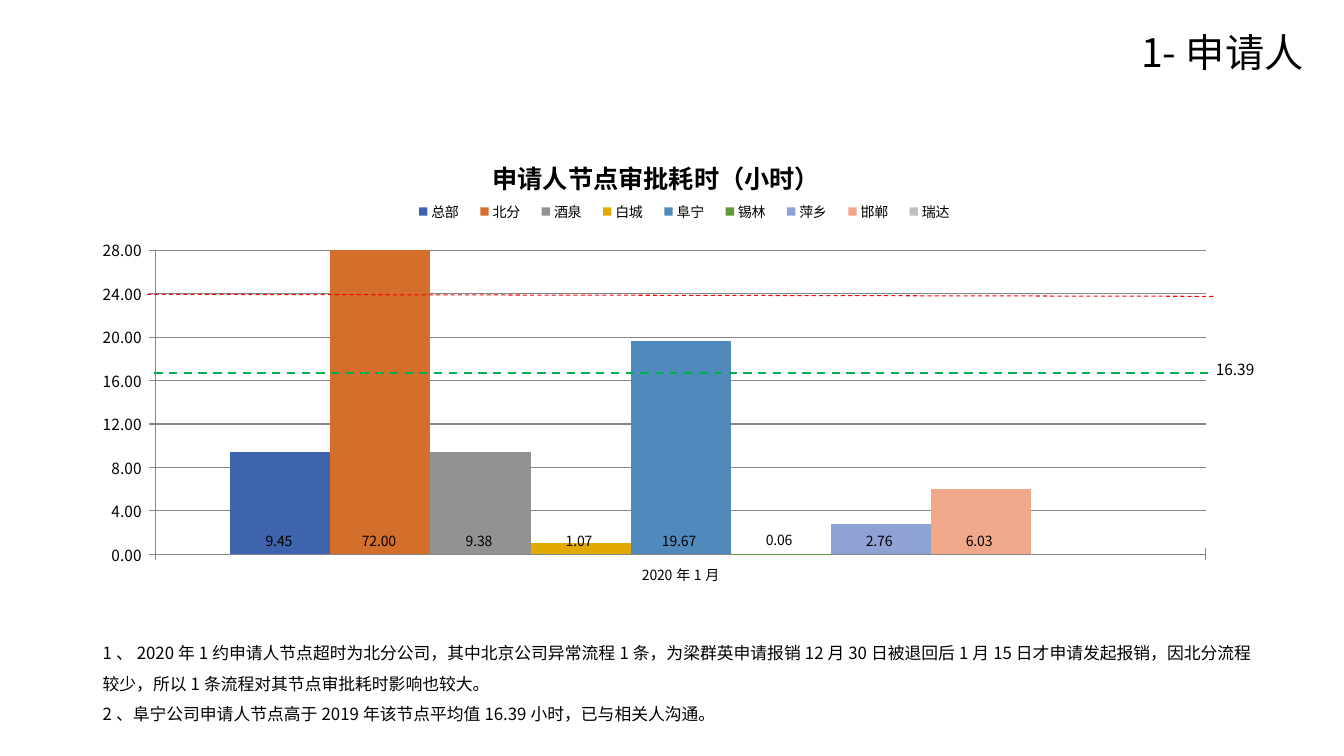
from dataclasses import dataclass
from typing import Optional

from lxml import etree
from pptx import Presentation
from pptx import util as u
from pptx.chart.data import CategoryChartData
from pptx.dml.color import RGBColor
from pptx.enum import chart as ch
from pptx.enum import dml, shapes, text
from pptx.oxml import parse_xml
from pptx.oxml.ns import nsdecls, qn

FONT = "Noto Sans CJK SC"
NUMBER_FORMAT = "0.00_ "
BLACK = RGBColor(0x00, 0x00, 0x00)
GRID = RGBColor(0x86, 0x86, 0x86)
RED = RGBColor(0xFF, 0x00, 0x00)
GREEN = RGBColor(0x00, 0xB0, 0x50)
BLUE = RGBColor(0x3D, 0x64, 0xAD)
ORANGE = RGBColor(0xD3, 0x6F, 0x2B)
GRAY = RGBColor(0x92, 0x92, 0x92)
GOLD = RGBColor(0xE2, 0xAA, 0x00)
SKY = RGBColor(0x50, 0x89, 0xBC)
LEAF = RGBColor(0x62, 0x99, 0x3E)
PALE_BLUE = RGBColor(0x8F, 0xA2, 0xD4)
PALE_ORANGE = RGBColor(0xF1, 0xA7, 0x8A)
PALE_GRAY = RGBColor(0xBF, 0xBF, 0xBF)

INSIDE = ch.XL_LABEL_POSITION.INSIDE_BASE
OUTSIDE = ch.XL_LABEL_POSITION.OUTSIDE_END


@dataclass
class Branch:
    name: str
    hours: float
    color: RGBColor
    label: Optional[ch.XL_LABEL_POSITION] = INSIDE


@dataclass
class Note:
    box: tuple[float, float, float, float]
    lines: list[str]
    size: float
    spacing: float = 1.0
    anchor: text.MSO_ANCHOR = text.MSO_ANCHOR.TOP


@dataclass
class Threshold:
    start: tuple[float, float]
    end: tuple[float, float]
    color: RGBColor
    width: float


BRANCHES = [
    Branch("总部", 9.45, BLUE),
    Branch("北分", 72, ORANGE),
    Branch("酒泉", 9.38, GRAY),
    Branch("白城", 1.07, GOLD),
    Branch("阜宁", 19.67, SKY),
    Branch("锡林", 0.06, LEAF, OUTSIDE),
    Branch("萍乡", 2.76, PALE_BLUE),
    Branch("邯郸", 6.03, PALE_ORANGE),
    Branch("瑞达", 0, PALE_GRAY, None),
]
THRESHOLDS = [
    Threshold((1.46, 2.92), (12.06, 2.94), RED, 0.75),
    Threshold((1.53, 3.7), (11.99, 3.7), GREEN, 1.5),
]
NOTES = [
    Note((11.22, 0.28, 1.89, 0.53), ["1-申请人"], 28, 0.9, text.MSO_ANCHOR.MIDDLE),
    Note((0.92, 6.23, 11.59, 1.01), [
        "1、2020年1约申请人节点超时为北分公司，其中北京公司异常流程1条，为梁群英申请报销12月30日被退回后1月15日才申请发起报销，因北分流程较少，所以1条流程对其节点审批耗时影响也较大。",
        "2、阜宁公司申请人节点高于2019年该节点平均值16.39小时，已与相关人沟通。",
    ], 12, 1.5),
    Note((11.96, 3.52, 0.58, 0.29), ["16.39"], 11),
]


def style_font(font, size: float, bold: bool = False) -> None:
    font.name = FONT
    font.size = u.Pt(size)
    font.bold = bold
    font.color.rgb = BLACK
    latin = font._element.find(qn("a:latin"))
    latin.addnext(parse_xml(f'<a:ea {nsdecls("a")} typeface="{FONT}"/>'))


def add_note(s, note: Note) -> None:
    sp = s.shapes.add_textbox(*map(u.Inches, note.box))
    tf = sp.text_frame
    tf.word_wrap = True
    tf.vertical_anchor = note.anchor
    for i, line in enumerate(note.lines):
        p = tf.add_paragraph() if i else tf.paragraphs[0]
        p.line_spacing = note.spacing
        r = p.add_run()
        r.text = line
        style_font(r.font, note.size)


def add_threshold(s, threshold: Threshold) -> None:
    ends = map(u.Inches, threshold.start + threshold.end)
    line = s.shapes.add_connector(shapes.MSO_CONNECTOR.STRAIGHT, *ends)
    line.line.color.rgb = threshold.color
    line.line.width = u.Pt(threshold.width)
    line.line.dash_style = dml.MSO_LINE.DASH
    etree.SubElement(line._element.spPr, qn("a:effectLst"))


def place(parent, after: str, inner: bool = False, **fractions: float) -> None:
    for old in parent.findall(qn("c:layout")):
        parent.remove(old)
    target = '<c:layoutTarget val="inner"/>' if inner else ""
    modes = "".join(f'<c:{k}Mode val="edge"/>' for k in fractions if k in "xy")
    values = "".join(f'<c:{k} val="{v}"/>' for k, v in fractions.items())
    layout = parse_xml(
        f'<c:layout {nsdecls("c")}><c:manualLayout>{target}{modes}{values}'
        "</c:manualLayout></c:layout>"
    )
    if after:
        parent.find(qn(after)).addnext(layout)
    else:
        parent.insert(0, layout)


def style_axis(axis, size: float) -> None:
    axis.major_tick_mark = ch.XL_TICK_MARK.CROSS
    axis.format.line.color.rgb = GRID
    axis.format.line.width = u.Pt(0.75)
    style_font(axis.tick_labels.font, size)


def style_series(series, branch: Branch) -> None:
    series.format.fill.solid()
    series.format.fill.fore_color.rgb = branch.color
    series.invert_if_negative = False
    if branch.label is not None:
        labels = series.data_labels
        labels.show_value = True
        labels.position = branch.label
        labels.number_format = NUMBER_FORMAT
        labels.number_format_is_linked = False
        style_font(labels.font, 10)


def add_hours_chart(s) -> None:
    data = CategoryChartData()
    data.categories = ["2020年1月"]
    for branch in BRANCHES:
        data.add_series(branch.name, [branch.hours])
    box = map(u.Inches, (0.58, 1.25, 12.17, 4.99))
    chart = s.shapes.add_chart(ch.XL_CHART_TYPE.COLUMN_CLUSTERED, *box, data).chart
    style_font(chart.font, 10)

    chart.has_title = True
    r = chart.chart_title.text_frame.paragraphs[0].add_run()
    r.text = "申请人节点审批耗时（小时）"
    style_font(r.font, 18, True)
    chart.chart_title.include_in_layout = False
    place(chart.chart_title._element, "c:tx", x=0.35, y=0.05)

    chart.has_legend = True
    chart.legend.position = ch.XL_LEGEND_POSITION.TOP
    chart.legend.include_in_layout = False
    style_font(chart.legend.font, 10)
    place(chart.legend._element, "c:legendPos", x=0.28, y=0.14, w=0.46, h=0.06)

    plot = chart.plots[0]
    plot.gap_width = 150
    plot.overlap = 0
    plot.vary_by_categories = False
    for series, branch in zip(plot.series, BRANCHES):
        style_series(series, branch)

    style_axis(chart.category_axis, 10)
    axis = chart.value_axis
    style_axis(axis, 11)
    axis.minimum_scale = 0
    axis.maximum_scale = 28
    axis.major_unit = 4
    axis.tick_labels.number_format = NUMBER_FORMAT
    axis.tick_labels.number_format_is_linked = False
    axis.major_gridlines.format.line.color.rgb = GRID
    axis.major_gridlines.format.line.width = u.Pt(0.75)
    plot_area = chart._chartSpace.chart.plotArea
    place(plot_area, "", True, x=0.079, y=0.247, w=0.856, h=0.605)


def main() -> None:
    prs = Presentation()
    prs.slide_width = u.Inches(13.33)
    prs.slide_height = u.Inches(7.5)
    s = prs.slides.add_slide(prs.slide_layouts[6])
    add_hours_chart(s)
    for threshold in THRESHOLDS:
        add_threshold(s, threshold)
    for note in NOTES:
        add_note(s, note)
    prs.save("out.pptx")


if __name__ == "__main__":
    main()
